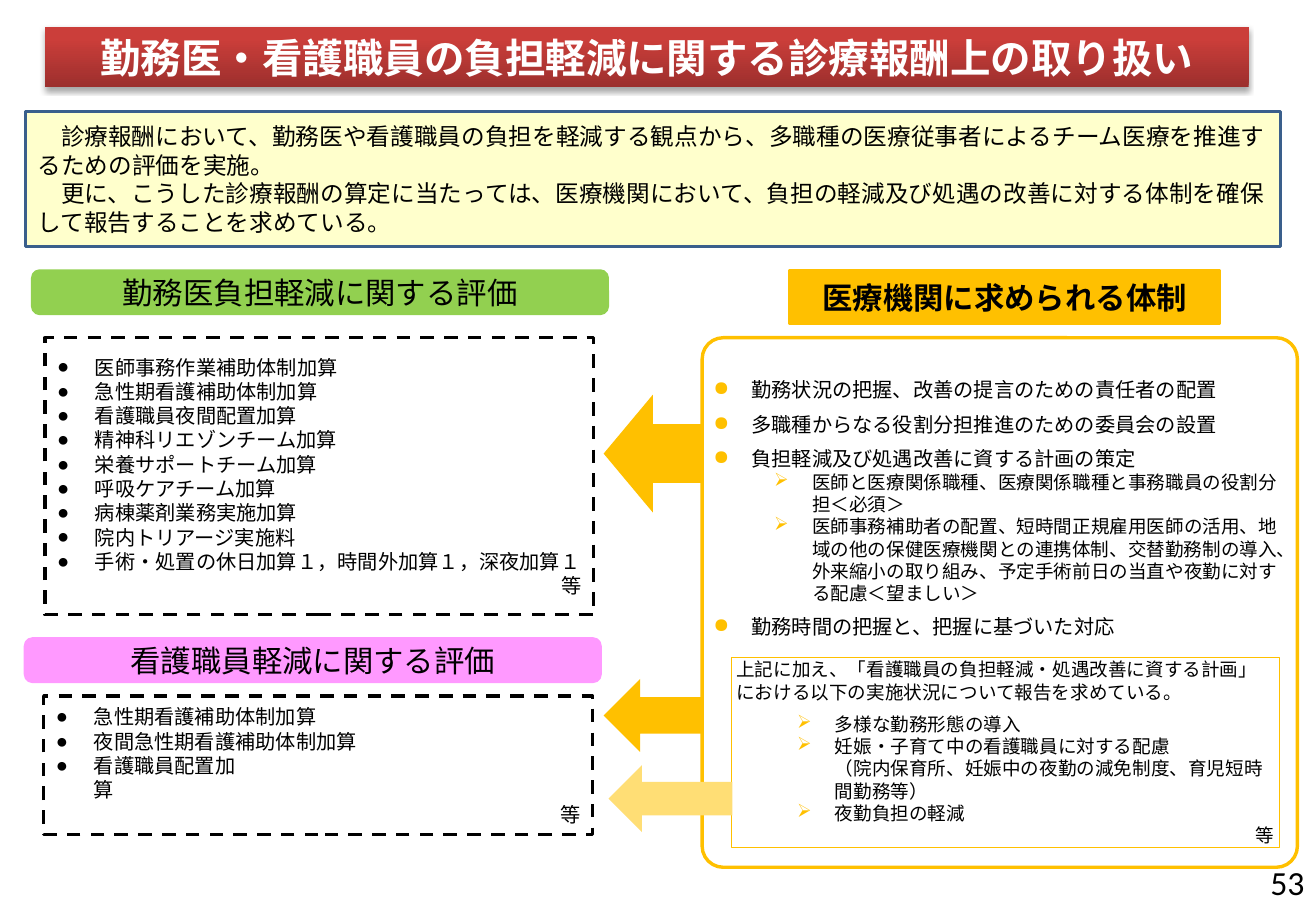
from dataclasses import dataclass

from lxml.etree import SubElement
from pptx import Presentation
from pptx.dml.color import RGBColor
from pptx.enum.dml import MSO_LINE
from pptx.enum.shapes import MSO_SHAPE
from pptx.enum.text import MSO_ANCHOR, MSO_AUTO_SIZE, PP_ALIGN
from pptx.oxml.ns import qn
from pptx.util import Pt


@dataclass(frozen=True)
class Theme:
    font: str = "Calibri"
    ink: str = "000000"
    white: str = "FFFFFF"
    red_dark: str = "9C2F2D"
    red: str = "CB3E3A"
    cream: str = "FFFFCC"
    navy: str = "3A5F8C"
    green: str = "92D050"
    pink: str = "FF99FF"
    amber: str = "FFC000"
    amber_pale: str = "FFDE75"
    title: int = 24
    number: int = 20
    heading: int = 18
    lead: int = 14
    item: int = 12
    detail: int = 11


THEME = Theme()

TITLE = "勤務医・看護職員の負担軽減に関する診療報酬上の取り扱い"
LEAD = [
    ("lead", "診療報酬において、勤務医や看護職員の負担を軽減する観点から、多職種の医療従事者によるチーム医療を推進するための評価を実施。"),
    ("lead", "更に、こうした診療報酬の算定に当たっては、医療機関において、負担の軽減及び処遇の改善に対する体制を確保して報告することを求めている。"),
]
DOCTOR_ITEMS = [
    ("item", "医師事務作業補助体制加算"),
    ("item", "急性期看護補助体制加算"),
    ("item", "看護職員夜間配置加算"),
    ("item", "精神科リエゾンチーム加算"),
    ("item", "栄養サポートチーム加算"),
    ("item", "呼吸ケアチーム加算"),
    ("item", "病棟薬剤業務実施加算"),
    ("item", "院内トリアージ実施料"),
    ("item", "手術・処置の休日加算１，時間外加算１，深夜加算１"),
    ("etc", "等"),
]
NURSE_ITEMS = [
    ("item", "急性期看護補助体制加算"),
    ("item", "夜間急性期看護補助体制加算"),
    ("item", "看護職員配置加\v算"),
    ("etc", "等"),
]
SYSTEM_ITEMS = [
    ("duty", "勤務状況の把握、改善の提言のための責任者の配置"),
    ("duty", "多職種からなる役割分担推進のための委員会の設置"),
    ("plan", "負担軽減及び処遇改善に資する計画の策定"),
    ("detail", "医師と医療関係職種、医療関係職種と事務職員の役割分担＜必須＞"),
    ("detail", "医師事務補助者の配置、短時間正規雇用医師の活用、地域の他の保健医療機関との連携体制、交替勤務制の導入、外来縮小の取り組み、予定手術前日の当直や夜勤に対する配慮＜望ましい＞"),
    ("last_duty", "勤務時間の把握と、把握に基づいた対応"),
]
REPORT_ITEMS = [
    ("report", "上記に加え、「看護職員の負担軽減・処遇改善に資する計画」における以下の実施状況について報告を求めている。"),
    ("detail", "多様な勤務形態の導入"),
    ("detail", "妊娠・子育て中の看護職員に対する配慮\v（院内保育所、妊娠中の夜勤の減免制度、育児短時間勤務等）"),
    ("detail", "夜勤負担の軽減"),
    ("detail_etc", "等"),
]

BULLET = dict(left=22.5, first=-22.5, bullet="●")
DUTY = dict(BULLET, size=THEME.item, tint=THEME.amber)
STYLES = {
    "title": dict(size=THEME.title, color=THEME.white, bold=True, align=PP_ALIGN.CENTER),
    "heading": dict(size=THEME.heading, align=PP_ALIGN.CENTER),
    "strong_heading": dict(size=THEME.heading, bold=True, align=PP_ALIGN.CENTER),
    "lead": dict(size=THEME.lead, first=THEME.lead),
    "item": dict(BULLET, size=THEME.item),
    "etc": dict(size=THEME.item, align=PP_ALIGN.RIGHT),
    "duty": dict(DUTY, after=6),
    "plan": DUTY,
    "last_duty": dict(DUTY, before=6, after=6),
    "detail": dict(size=THEME.detail, left=58.5, first=-22.5, bullet="➢", tint=THEME.amber),
    "report": dict(size=THEME.detail, after=6),
    "detail_etc": dict(size=THEME.detail, align=PP_ALIGN.RIGHT),
    "number": dict(size=THEME.number, align=PP_ALIGN.RIGHT),
}

TITLE_AT = (26.6, 15.8, 713.5, 36)
DOCTOR_AT = (26.6, 200.2, 325.4, 164.2)
NURSE_AT = (25.9, 412.6, 325.4, 82.1)
NUMBER_AT = (598.3, 508.3, 182, 28.8)
SYSTEM_FRAME = dict(margin_left=3, margin_right=3, margin_top=20, vertical_anchor=MSO_ANCHOR.TOP)
REPORT_FRAME = dict(margin_left=3, margin_right=3)
RECT, ROUND, ARROW = MSO_SHAPE.RECTANGLE, MSO_SHAPE.ROUNDED_RECTANGLE, MSO_SHAPE.LEFT_ARROW
SHAPES = [
    dict(kind=ROUND, at=(19.4, 160.6, 340.6, 25.2), fill=THEME.green, line=THEME.green, lines=[("heading", "勤務医負担軽減に関する評価")]),
    dict(kind=ROUND, at=(15.1, 378.7, 340.6, 25.2), fill=THEME.pink, line=THEME.pink, lines=[("heading", "看護職員軽減に関する評価")]),
    dict(kind=ROUND, at=(416.2, 200.2, 352.8, 313.9), line=THEME.amber, corner=0.04, lines=SYSTEM_ITEMS, frame=SYSTEM_FRAME),
    dict(kind=ARROW, at=(357.8, 234, 58.3, 69.8), fill=THEME.amber),
    dict(kind=RECT, at=(468, 160.6, 254.9, 31), fill=THEME.amber, line=THEME.amber, lines=[("strong_heading", "医療機関に求められる体制")]),
    dict(kind=ARROW, at=(357.8, 402.5, 58.3, 43.2), fill=THEME.amber),
    dict(kind=RECT, at=(15.1, 66.2, 743.8, 79.9), fill=THEME.cream, line=THEME.navy, lines=LEAD),
    dict(kind=RECT, at=(433.4, 389.5, 324.7, 113), line=THEME.amber, width=0.5, lines=REPORT_ITEMS, frame=REPORT_FRAME),
    dict(kind=ARROW, at=(360.7, 453.6, 73.4, 39.6), fill=THEME.amber_pale),
]


def assign(target, values):
    """Set each named value as an attribute of the target."""
    for name, value in values.items():
        setattr(target, name, value)


def place(box, at):
    """Move and size a box, in points."""
    assign(box, dict(zip(("left", "top", "width", "height"), map(Pt, at))))


def set_bullet(para, style):
    """Give a paragraph its indents and its bullet, or none."""
    properties = para._p.get_or_add_pPr()
    properties.set("marL", str(Pt(style.get("left", 0))))
    properties.set("indent", str(Pt(style.get("first", 0))))
    if "bullet" not in style:
        SubElement(properties, qn("a:buNone"))
        return
    color = SubElement(properties, qn("a:buClr"))
    SubElement(color, qn("a:srgbClr"), val=style.get("tint", THEME.ink))
    SubElement(properties, qn("a:buChar"), char=style["bullet"])


def write(box, lines, frame=None):
    """Fill a box with styled paragraphs."""
    text = box.text_frame
    margins = {"margin_left": 7.2, "margin_right": 7.2, "margin_top": 3.6, "margin_bottom": 3.6}
    values = dict(margins, word_wrap=True, auto_size=MSO_AUTO_SIZE.NONE, vertical_anchor=MSO_ANCHOR.MIDDLE)
    values.update(frame or {})
    assign(text, {name: Pt(value) if name.startswith("margin") else value for name, value in values.items()})
    for index, (style_name, words) in enumerate(lines):
        style = STYLES[style_name]
        para = text.add_paragraph() if index else text.paragraphs[0]
        para.text = words
        assign(para, dict(
            alignment=style.get("align", PP_ALIGN.LEFT),
            space_before=Pt(style.get("before", 0)),
            space_after=Pt(style.get("after", 0)),
        ))
        set_bullet(para, style)
        for span in para.runs:
            assign(span.font, dict(name=THEME.font, size=Pt(style["size"]), bold=style.get("bold", False)))
            span.font.color.rgb = RGBColor.from_string(style.get("color", THEME.ink))


def outline(box, color, width=2):
    """Draw the edge of a box in one colour."""
    box.line.color.rgb = RGBColor.from_string(color)
    box.line.width = Pt(width)


def add_title(page):
    """Build the red title bar with its gradient and soft shadow."""
    bar = page.shapes.title
    place(bar, TITLE_AT)
    bar.fill.gradient()
    bar.fill.gradient_angle = 90
    for stop, color, position in zip(bar.fill.gradient_stops, (THEME.red_dark, THEME.red), (0, 0.8)):
        stop.color.rgb = RGBColor.from_string(color)
        stop.position = position
    effects = SubElement(bar._element.spPr, qn("a:effectLst"))
    shadow = SubElement(effects, qn("a:outerShdw"), blurRad=str(Pt(3.1)), dist=str(Pt(1.8)), dir="5400000", rotWithShape="0")
    color = SubElement(shadow, qn("a:srgbClr"), val=THEME.ink)
    SubElement(color, qn("a:alpha"), val="35000")
    write(bar, [("title", TITLE)])


def add_box(page, kind, at, fill=None, line=None, width=2, corner=None, lines=(), frame=None):
    """Add a preset shape with its fill, edge and text."""
    box = page.shapes.add_shape(kind, *map(Pt, at))
    box.shadow.inherit = False
    if corner is not None:
        box.adjustments[0] = corner
    if fill:
        box.fill.solid()
        box.fill.fore_color.rgb = RGBColor.from_string(fill)
    else:
        box.fill.background()
    if line:
        outline(box, line, width)
    else:
        box.line.fill.background()
    if lines:
        write(box, lines, frame)


def main():
    """Build the slide and save it."""
    deck = Presentation()
    assign(deck, dict(slide_width=Pt(780), slide_height=Pt(540)))
    page = deck.slides.add_slide(deck.slide_layouts[3])
    add_title(page)
    for index, at, lines in ((1, DOCTOR_AT, DOCTOR_ITEMS), (2, NURSE_AT, NURSE_ITEMS)):
        box = page.placeholders[index]
        place(box, at)
        outline(box, THEME.ink)
        box.line.dash_style = MSO_LINE.DASH
        write(box, lines)
    for shape in SHAPES:
        add_box(page, **shape)
    write(page.shapes.add_textbox(*map(Pt, NUMBER_AT)), [("number", "53")])
    deck.save("out.pptx")


if __name__ == "__main__":
    main()
